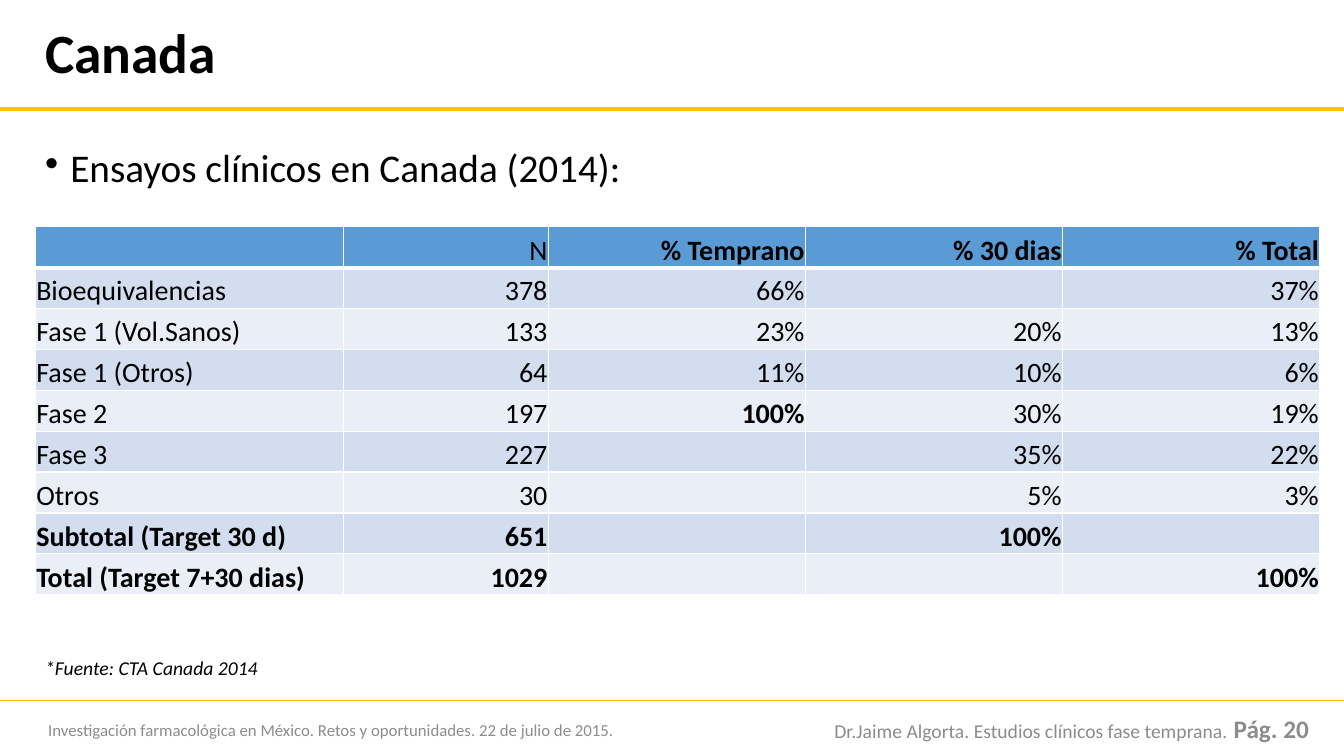
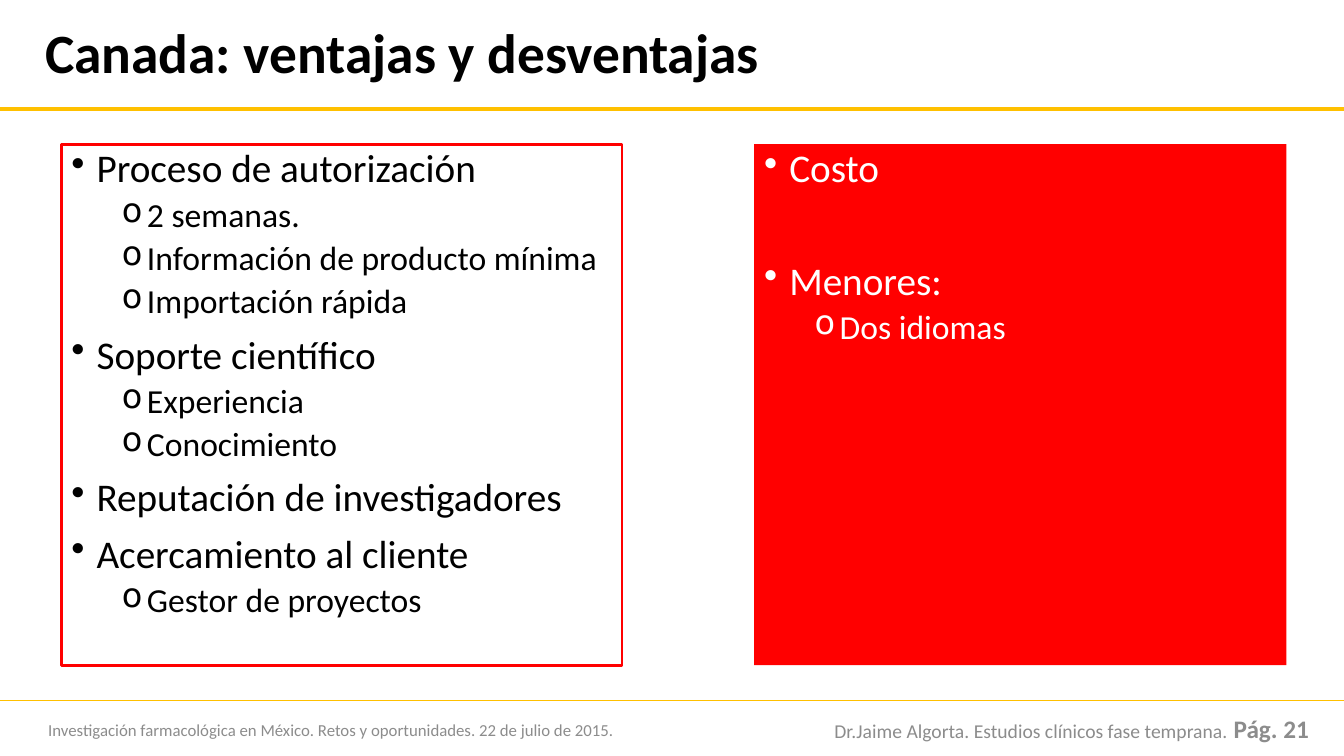
from dataclasses import dataclass
from typing import Any

import lxml.etree
import pptx
import pptx.dml.color
import pptx.enum.shapes
import pptx.enum.text
import pptx.oxml.ns
import pptx.util

Inches = pptx.util.Inches
Pt = pptx.util.Pt
Align = pptx.enum.text.PP_ALIGN
Anchor = pptx.enum.text.MSO_ANCHOR


@dataclass(frozen=True)
class Theme:
    font: str = "Calibri"
    black: str = "000000"
    white: str = "FFFFFF"
    gray: str = "8C8C8C"
    gold: str = "FFC000"
    red: str = "FF0000"
    head: str = "5B9BD5"
    bands: tuple[str, str] = ("D2DEEF", "EAEFF7")
    title: float = 39.6
    levels: tuple[int, int] = (28, 24)
    cell: int = 20
    page: int = 18
    note: int = 14
    event: int = 12


@dataclass(frozen=True)
class Box:
    left: float
    top: float
    width: float
    height: float

    def emu(self) -> tuple[int, ...]:
        return tuple(Inches(n) for n in (self.left, self.top, self.width, self.height))


@dataclass(frozen=True)
class Item:
    text: str
    level: int = 0
    gap: int = 0  # space before in points; 0 takes the usual space of the level


@dataclass(frozen=True)
class Panel:
    box: Box
    items: tuple[Item, ...]
    ink: str
    fill: str = ""
    line: str = ""


THEME = Theme()
WIDE = 13.33
LEFT = 0.35
SPAN = 12.73
TOP = 1.43
FIRST = 20
GAPS = (10, 5)
EVENT = "Investigación farmacológica en México. Retos y oportunidades. 22 de julio de 2015."
AUTHOR = "Dr.Jaime Algorta. Estudios clínicos fase temprana."

COLS = (3.06, 2.03, 2.55, 2.55, 2.55)
ROWS = (
    ("", "N", "% Temprano", "% 30 dias", "% Total"),
    ("Bioequivalencias", "378", "66%", "", "37%"),
    ("Fase 1 (Vol.Sanos)", "133", "23%", "20%", "13%"),
    ("Fase 1 (Otros)", "64", "11%", "10%", "6%"),
    ("Fase 2", "197", "100%", "30%", "19%"),
    ("Fase 3", "227", "", "35%", "22%"),
    ("Otros", "30", "", "5%", "3%"),
    ("Subtotal (Target 30 d)", "651", "", "100%", ""),
    ("Total (Target 7+30 dias)", "1029", "", "", "100%"),
)
TOTALS = (7, 8)

PROS = Panel(
    Box(0.61, TOP, 5.56, 5.17),
    (
        Item("Proceso de autorización"),
        Item("2 semanas.", 1),
        Item("Información de producto mínima", 1),
        Item("Importación rápida", 1),
        Item("Soporte científico"),
        Item("Experiencia", 1),
        Item("Conocimiento", 1),
        Item("Reputación de investigadores"),
        Item("Acercamiento al cliente"),
        Item("Gestor de proyectos", 1),
    ),
    THEME.black,
    line=THEME.red,
)
CONS = Panel(
    Box(7.48, TOP, 5.28, 5.17),
    (Item("Costo"), Item("Menores:", gap=50), Item("Dos idiomas", 1)),
    THEME.white,
    fill=THEME.red,
)


def color(code: str) -> pptx.dml.color.RGBColor:
    return pptx.dml.color.RGBColor.from_string(code)


def node(parent: Any, tag: str, **attrs: str) -> Any:
    return lxml.etree.SubElement(parent, pptx.oxml.ns.qn(tag), attrs)


def add_run(para: Any, text: str, size: float, ink: str = THEME.black,
            bold: bool = False, slant: bool = False) -> None:
    run = para.add_run()
    run.text = text
    font = run.font
    font.name = THEME.font
    font.size = Pt(size)
    font.bold = bold
    font.italic = slant
    font.color.rgb = color(ink)


def add_box(slide: Any, box: Box, anchor: Any = Anchor.MIDDLE) -> Any:
    """Add an empty text box and return its text frame."""
    frame = slide.shapes.add_textbox(*box.emu()).text_frame
    frame.word_wrap = True
    frame.vertical_anchor = anchor
    return frame


def add_rule(slide: Any, top: float, weight: float) -> None:
    """Draw a gold line across the slide."""
    rule = slide.shapes.add_connector(
        pptx.enum.shapes.MSO_CONNECTOR.STRAIGHT,
        Inches(0), Inches(top), Inches(WIDE), Inches(top))
    rule.line.color.rgb = color(THEME.gold)
    rule.line.width = Pt(weight)
    node(rule._element.spPr, "a:effectLst")


def add_page(deck: Any, title: str) -> Any:
    """Add a slide with its title, rules and footer."""
    slide = deck.slides.add_slide(deck.slide_layouts[6])
    number = FIRST + len(deck.slides) - 1
    add_rule(slide, 1.08, 3)
    add_rule(slide, 6.95, 1)

    para = add_box(slide, Box(LEFT, 0.22, SPAN, 0.67)).paragraphs[0]
    para.line_spacing = 0.9
    add_run(para, title, THEME.title, bold=True)

    para = add_box(slide, Box(0.38, 7.03, 6.48, 0.42)).paragraphs[0]
    add_run(para, EVENT, THEME.event, THEME.gray)

    para = add_box(slide, Box(7.9, 7.03, 5.18, 0.4)).paragraphs[0]
    para.alignment = Align.RIGHT
    add_run(para, AUTHOR, THEME.note, THEME.gray)
    add_run(para, f" Pág. {number}", THEME.page, THEME.gray, bold=True)
    return slide


def add_list(frame: Any, items: tuple[Item, ...], ink: str) -> None:
    for index, item in enumerate(items):
        para = frame.add_paragraph() if index else frame.paragraphs[0]
        para.level = item.level
        props = para._p.get_or_add_pPr()
        props.set("marL", str(Inches(0.25 + 0.5 * item.level)))
        props.set("indent", str(Inches(-0.25)))
        node(props, "a:buChar", char="•o"[item.level])
        para.alignment = Align.LEFT
        para.line_spacing = 0.9
        if index:
            para.space_before = Pt(item.gap or GAPS[item.level])
        add_run(para, item.text, THEME.levels[item.level], ink)


def add_panel(slide: Any, panel: Panel) -> None:
    shape = slide.shapes.add_shape(
        pptx.enum.shapes.MSO_SHAPE.RECTANGLE, *panel.box.emu())
    shape.shadow.inherit = False
    if panel.fill:
        shape.fill.solid()
        shape.fill.fore_color.rgb = color(panel.fill)
    else:
        shape.fill.background()
    if panel.line:
        shape.line.color.rgb = color(panel.line)
        shape.line.width = Pt(2)
    else:
        shape.line.fill.background()
    frame = shape.text_frame
    frame.word_wrap = True
    frame.vertical_anchor = Anchor.TOP
    add_list(frame, panel.items, panel.ink)


def set_cell(cell: Any, row: int, col: int, text: str) -> None:
    """Give a cell its borders, fill and text."""
    props = cell._tc.get_or_add_tcPr()
    for side in "LRTB":
        thick = (row, side) in ((0, "B"), (1, "T"))
        edge = node(props, f"a:ln{side}", w=str(Pt(3 if thick else 1)))
        node(node(edge, "a:solidFill"), "a:srgbClr", val=THEME.white)
    cell.fill.solid()
    cell.fill.fore_color.rgb = color(THEME.bands[(row - 1) % 2] if row else THEME.head)
    cell.margin_left = cell.margin_right = cell.margin_top = Inches(0.01)
    cell.margin_bottom = Inches(0)
    cell.vertical_anchor = Anchor.BOTTOM
    if text:
        para = cell.text_frame.paragraphs[0]
        para.alignment = Align.RIGHT if col else Align.LEFT
        bold = row in TOTALS or text == "100%" or (row == 0 and col > 1)
        add_run(para, text, THEME.cell, bold=bold)


def add_grid(slide: Any, box: Box) -> None:
    table = slide.shapes.add_table(len(ROWS), len(COLS), *box.emu()).table
    table.first_row = table.horz_banding = False
    for col, width in enumerate(COLS):
        table.columns[col].width = Inches(width)
    for row, texts in enumerate(ROWS):
        table.rows[row].height = Inches(box.height / len(ROWS))
        for col, text in enumerate(texts):
            set_cell(table.cell(row, col), row, col, text)


def main() -> None:
    deck = pptx.Presentation()
    deck.slide_width = Inches(WIDE)
    deck.slide_height = Inches(7.5)

    slide = add_page(deck, "Canada")
    frame = add_box(slide, Box(LEFT, TOP, SPAN, 0.6), Anchor.TOP)
    add_list(frame, (Item("Ensayos clínicos en Canada (2014):"),), THEME.black)
    add_grid(slide, Box(LEFT, 2.25, SPAN, 3.65))
    para = add_box(slide, Box(LEFT, 6.44, SPAN, 0.36)).paragraphs[0]
    add_run(para, "*Fuente: CTA Canada 2014", THEME.note, slant=True)

    slide = add_page(deck, "Canada: ventajas y desventajas")
    for panel in (CONS, PROS):
        add_panel(slide, panel)

    deck.save("out.pptx")


if __name__ == "__main__":
    main()
